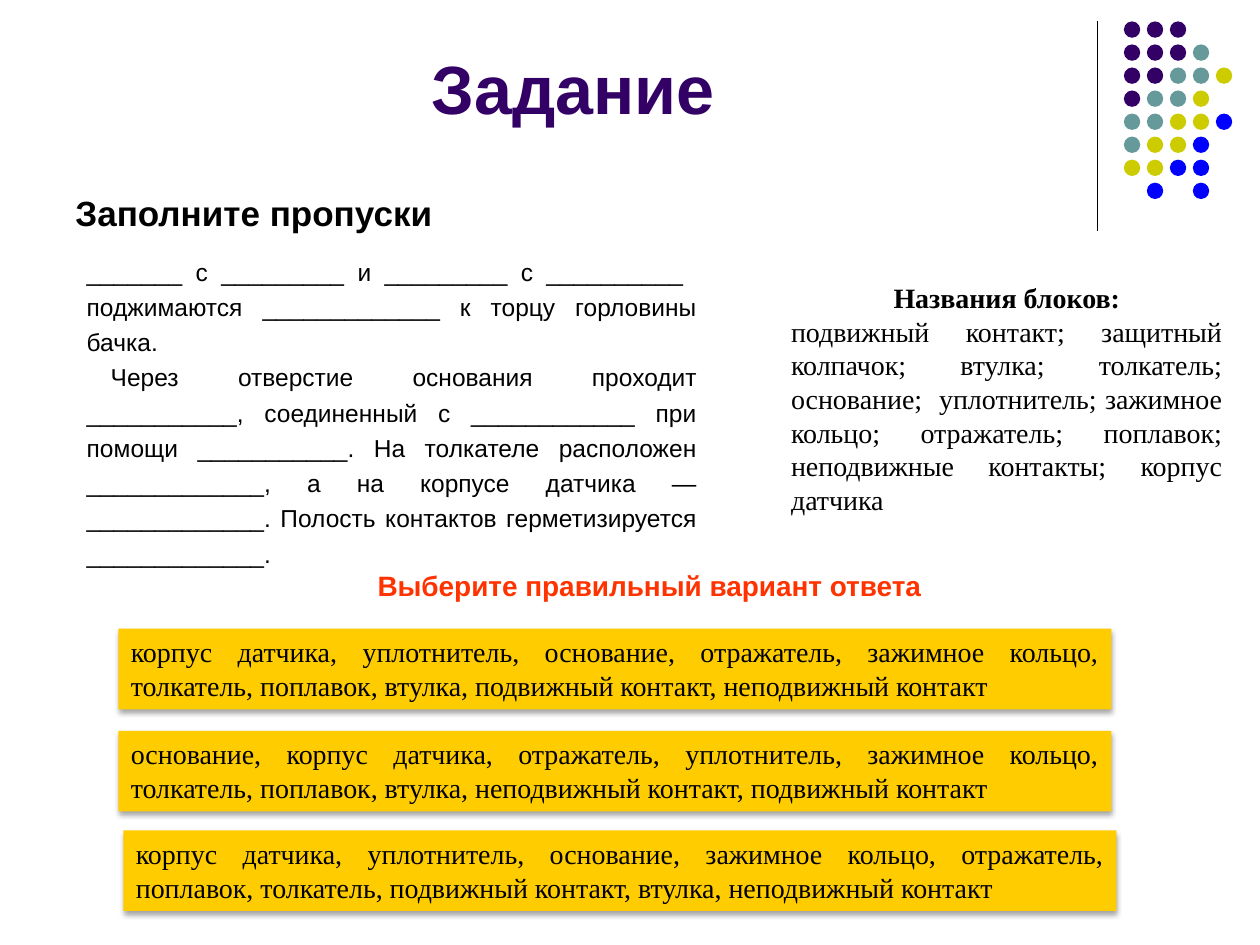
from dataclasses import dataclass

from lxml.etree import SubElement
from pptx import Presentation
from pptx.dml.color import RGBColor
from pptx.enum.shapes import MSO_CONNECTOR as Connector, MSO_SHAPE as Shape
from pptx.enum.text import MSO_ANCHOR as Anchor, MSO_AUTO_SIZE as AutoSize, PP_ALIGN as Align
from pptx.oxml.ns import qn
from pptx.util import Inches, Pt


@dataclass(frozen=True)
class Theme:
    purple: str = "330066"
    teal: str = "669999"
    olive: str = "CCCC00"
    blue: str = "0000FF"
    black: str = "000000"
    red: str = "FF3300"
    yellow: str = "FFCC00"
    sans: str = "Arial"
    serif: str = "Times New Roman"
    title_size: int = 39
    heading_size: int = 20
    option_size: int = 16
    exercise_size: int = 14


THEME = Theme()

DOT_ROWS = ("PPP", "PPPT", "PPTTO", "PTTO", "TTOOB", "TOOB", "OOBB", " B B")
DOT_COLOURS = {"P": THEME.purple, "T": THEME.teal, "O": THEME.olive, "B": THEME.blue}

EXERCISE = (
    "_______ с _________ и _________ с __________  поджимаются _____________ "
    "к торцу горловины бачка.",
    "\tЧерез отверстие основания проходит ___________, соединенный с ____________ "
    "при помощи ___________. На толкателе расположен _____________, а на корпусе "
    "датчика — _____________. Полость контактов герметизируется _____________.",
)
BLOCK_NAMES = (
    "подвижный контакт; защитный колпачок; втулка; толкатель; основание;  "
    "уплотнитель; зажимное кольцо; отражатель; поплавок; неподвижные контакты; "
    "корпус датчика"
)
ANSWERS = (
    (0.94, 4.99, "корпус датчика, уплотнитель, основание, отражатель, зажимное кольцо, "
                 "толкатель, поплавок, втулка, подвижный контакт, неподвижный контакт"),
    (0.94, 5.8, "основание, корпус датчика, отражатель, уплотнитель, зажимное кольцо, "
                "толкатель, поплавок, втулка, неподвижный контакт, подвижный контакт"),
    (0.98, 6.59, "корпус датчика, уплотнитель, основание, зажимное кольцо, отражатель, "
                 "поплавок, толкатель, подвижный контакт, втулка, неподвижный контакт"),
)


def set_attributes(target, values):
    for name, value in values.items():
        setattr(target, name, value)


def fill_shape(shape, colour):
    shape.fill.solid()
    shape.fill.fore_color.rgb = RGBColor.from_string(colour)
    shape.line.fill.background()
    shape.shadow.inherit = False


def write_paragraph(paragraph, text, size, font=THEME.sans, colour=THEME.black,
                    bold=False, **paragraph_format):
    set_attributes(paragraph, paragraph_format)
    run = paragraph.add_run()
    run.text = text
    set_attributes(run.font, {"name": font, "size": Pt(size), "bold": bold})
    run.font.color.rgb = RGBColor.from_string(colour)


def add_text_box(slide, left, top, width, height, **frame_format):
    box = slide.shapes.add_textbox(Inches(left), Inches(top), Inches(width), Inches(height))
    set_attributes(box.text_frame, {"word_wrap": True, **frame_format})
    return box.text_frame


def add_tab_stop(paragraph, position):
    tabs = SubElement(paragraph._p.get_or_add_pPr(), qn("a:tabLst"))
    SubElement(tabs, qn("a:tab"), pos=str(Inches(position)), algn="l")


def add_divider(slide):
    line = slide.shapes.add_connector(
        Connector.STRAIGHT, Inches(8.71), Inches(0.17), Inches(8.71), Inches(1.83))
    line.line.width = Pt(0.75)
    line.line.color.rgb = RGBColor.from_string(THEME.black)
    SubElement(line._element.spPr, qn("a:effectLst"))


def add_dots(slide):
    group = slide.shapes.add_group_shape()
    column_pitch, row_pitch, size = 0.73 / 4, 1.28 / 7, Inches(0.13)
    for row, codes in enumerate(DOT_ROWS):
        for column, code in enumerate(codes):
            if code in DOT_COLOURS:
                dot = group.shapes.add_shape(
                    Shape.OVAL, Inches(8.92 + column * column_pitch),
                    Inches(0.17 + row * row_pitch), size, size)
                fill_shape(dot, DOT_COLOURS[code])


def add_soft_shadow(shape):
    effects = shape._element.spPr.find(qn("a:effectLst"))
    shadow = SubElement(effects, qn("a:outerShdw"), blurRad=str(Pt(3.1)),
                        dist=str(Pt(1.8)), dir="5400000", rotWithShape="0")
    colour = SubElement(shadow, qn("a:srgbClr"), val=THEME.black)
    SubElement(colour, qn("a:alpha"), val="35000")


def add_answer(slide, left, top, text):
    card = slide.shapes.add_shape(
        Shape.RECTANGLE, Inches(left), Inches(top), Inches(7.88), Inches(0.64))
    fill_shape(card, THEME.yellow)
    add_soft_shadow(card)
    set_attributes(card.text_frame, {"word_wrap": True, "vertical_anchor": Anchor.TOP})
    write_paragraph(card.text_frame.paragraphs[0], text, THEME.option_size, THEME.serif,
                    alignment=Align.JUSTIFY)


def add_headings(slide):
    title = add_text_box(slide, 0.5, -0.35, 8.25, 1.42, vertical_anchor=Anchor.BOTTOM)
    write_paragraph(title.paragraphs[0], "Задание ", THEME.title_size,
                    colour=THEME.purple, bold=True, alignment=Align.CENTER)
    heading = add_text_box(slide, 0.5, 1.47, 4.26, 0.45)
    write_paragraph(heading.paragraphs[0], "Заполните пропуски", THEME.heading_size, bold=True)
    prompt = add_text_box(slide, 2.48, 4.46, 5.35, 0.37, auto_size=AutoSize.SHAPE_TO_FIT_TEXT)
    write_paragraph(prompt.paragraphs[0], "Выберите правильный вариант ответа",
                    THEME.option_size, colour=THEME.red, bold=True, alignment=Align.CENTER)


def add_exercise(slide):
    frame = add_text_box(slide, 0.59, 1.94, 5.04, 3.01, auto_size=AutoSize.SHAPE_TO_FIT_TEXT)
    for index, text in enumerate(EXERCISE):
        paragraph = frame.add_paragraph() if index else frame.paragraphs[0]
        write_paragraph(paragraph, text, THEME.exercise_size,
                        alignment=Align.JUSTIFY, line_spacing=1.2)
        add_tab_stop(paragraph, 0.19)


def add_block_names(slide):
    frame = add_text_box(slide, 6.18, 2.18, 3.62, 1.97, auto_size=AutoSize.SHAPE_TO_FIT_TEXT)
    write_paragraph(frame.paragraphs[0], "Названия блоков:", THEME.option_size, THEME.serif,
                    bold=True, alignment=Align.CENTER)
    write_paragraph(frame.add_paragraph(), BLOCK_NAMES, THEME.option_size, THEME.serif,
                    alignment=Align.JUSTIFY)


def main():
    presentation = Presentation()
    set_attributes(presentation, {"slide_width": Inches(10), "slide_height": Inches(7.5)})
    slide = presentation.slides.add_slide(presentation.slide_layouts[6])
    add_divider(slide)
    add_dots(slide)
    add_headings(slide)
    add_exercise(slide)
    add_block_names(slide)
    for left, top, text in ANSWERS:
        add_answer(slide, left, top, text)
    presentation.save("out.pptx")


if __name__ == "__main__":
    main()
